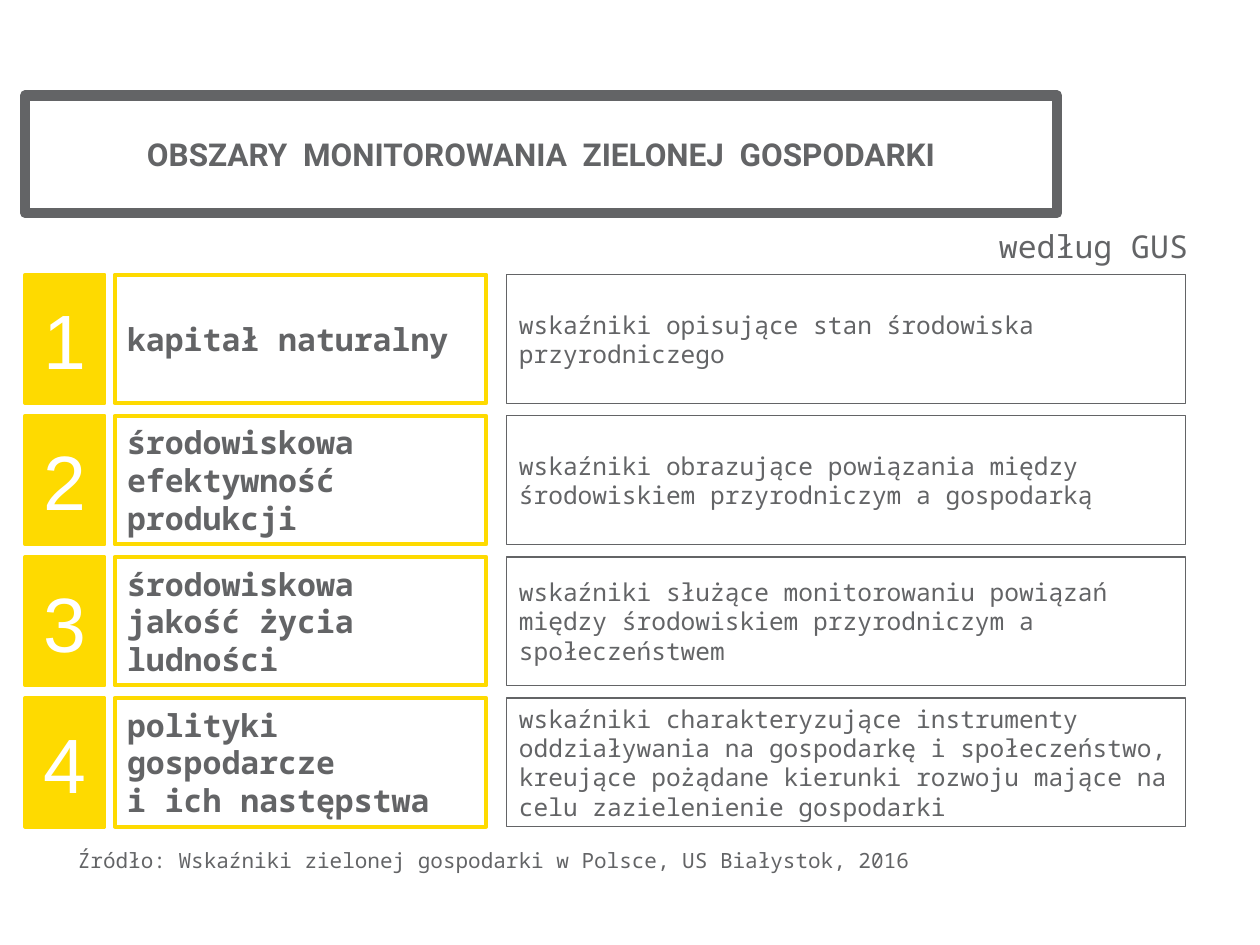
from dataclasses import dataclass

from pptx import Presentation
from pptx.dml.color import RGBColor
from pptx.enum.shapes import MSO_SHAPE
from pptx.enum.text import MSO_ANCHOR, MSO_AUTO_SIZE, PP_ALIGN
from pptx.util import Inches, Pt

RECT = MSO_SHAPE.RECTANGLE
MIDDLE = MSO_ANCHOR.MIDDLE
FIXED = MSO_AUTO_SIZE.NONE
LEFT, CENTER = PP_ALIGN.LEFT, PP_ALIGN.CENTER


@dataclass(frozen=True)
class Theme:
    gray: RGBColor = RGBColor(0x63, 0x64, 0x66)
    gold: RGBColor = RGBColor(0xFE, 0xDA, 0x00)
    white: RGBColor = RGBColor(0xFF, 0xFF, 0xFF)
    mono: str = "Noto Sans Mono"
    head: str = "Roboto"
    digit: str = "Arial"
    large: float = 18
    body: float = 14
    small: float = 12
    huge: float = 44
    frame: float = 6
    thick: float = 2.25
    thin: float = 0.75


@dataclass(frozen=True)
class Style:
    font: str
    size: float
    color: RGBColor
    bold: bool = False
    align: PP_ALIGN = LEFT


@dataclass(frozen=True)
class Column:
    left: float
    width: float
    edge: RGBColor
    weight: float
    style: Style
    fill: RGBColor | None = None


@dataclass(frozen=True)
class Area:
    label: str
    note: str


THEME = Theme()
TITLE = Style(THEME.head, THEME.large, THEME.gray, True, CENTER)
PLAIN = Style(THEME.mono, THEME.large, THEME.gray)
LABEL = Style(THEME.mono, THEME.large, THEME.gray, True)
NOTE = Style(THEME.mono, THEME.body, THEME.gray)
SOURCE = Style(THEME.mono, THEME.small, THEME.gray)
DIGIT = Style(THEME.digit, THEME.huge, THEME.white, False, CENTER)

TOP, PITCH, HEIGHT = 2.18, 1.12, 1.02
COLUMNS = (
    Column(0.2, 0.63, THEME.gold, THEME.thick, DIGIT, THEME.gold),
    Column(0.91, 2.95, THEME.gold, THEME.thick, LABEL),
    Column(4.02, 5.39, THEME.gray, THEME.thin, NOTE),
)
AREAS = (
    Area("kapitał naturalny",
         "wskaźniki opisujące stan środowiska przyrodniczego"),
    Area("środowiskowa efektywność produkcji",
         "wskaźniki obrazujące powiązania między środowiskiem "
         "przyrodniczym a gospodarką"),
    Area("środowiskowa jakość życia ludności",
         "wskaźniki służące monitorowaniu powiązań między środowiskiem "
         "przyrodniczym a społeczeństwem"),
    Area("polityki gospodarcze\ni ich następstwa",
         "wskaźniki charakteryzujące instrumenty oddziaływania na "
         "gospodarkę i społeczeństwo, kreujące pożądane kierunki rozwoju "
         "mające na celu zazielenienie gospodarki"),
)


def write(shape, text: str, style: Style) -> None:
    frame = shape.text_frame
    frame.word_wrap = True
    frame.auto_size = FIXED
    para = frame.paragraphs[0]
    para.alignment = style.align
    for index, line in enumerate(text.split("\n")):
        if index:
            para.add_line_break()
        run = para.add_run()
        run.text = line
        font = run.font
        font.name, font.size, font.bold = style.font, Pt(style.size), style.bold
        font.color.rgb = style.color


def border(shape, color: RGBColor, weight: float) -> None:
    shape.line.color.rgb = color
    shape.line.width = Pt(weight)


def draw_title(slide, text: str) -> None:
    title = slide.shapes.title
    title.left, title.top = Inches(0.2), Inches(0.76)
    title.width, title.height = Inches(8.19), Inches(0.93)
    title.text_frame.vertical_anchor = MIDDLE
    border(title, THEME.gray, THEME.frame)
    write(title, text, TITLE)


def draw_text(slide, left: float, top: float, width: float, height: float,
              text: str, style: Style) -> None:
    box = slide.shapes.add_textbox(
        Inches(left), Inches(top), Inches(width), Inches(height))
    write(box, text, style)


def draw_cell(slide, col: Column, row: int, text: str) -> None:
    cell = slide.shapes.add_shape(
        RECT, Inches(col.left), Inches(TOP + row * PITCH),
        Inches(col.width), Inches(HEIGHT))
    cell.shadow.inherit = False
    if col.fill is None:
        cell.fill.background()
    else:
        cell.fill.solid()
        cell.fill.fore_color.rgb = col.fill
    border(cell, col.edge, col.weight)
    cell.text_frame.vertical_anchor = MIDDLE
    write(cell, text, col.style)


def main() -> None:
    deck = Presentation()
    deck.slide_width, deck.slide_height = Inches(10), Inches(7.5)
    slide = deck.slides.add_slide(deck.slide_layouts[5])
    draw_title(slide, "OBSZARY  MONITOROWANIA  ZIELONEJ  GOSPODARKI")
    draw_text(slide, 7.83, 1.75, 1.73, 0.4, "według GUS", PLAIN)
    for row, area in enumerate(AREAS):
        for col, text in zip(COLUMNS, (str(row + 1), area.label, area.note)):
            draw_cell(slide, col, row, text)
    draw_text(slide, 0.52, 6.68, 8.9, 0.3,
              "Źródło: Wskaźniki zielonej gospodarki w Polsce, "
              "US Białystok, 2016", SOURCE)
    deck.save("out.pptx")


if __name__ == "__main__":
    main()
